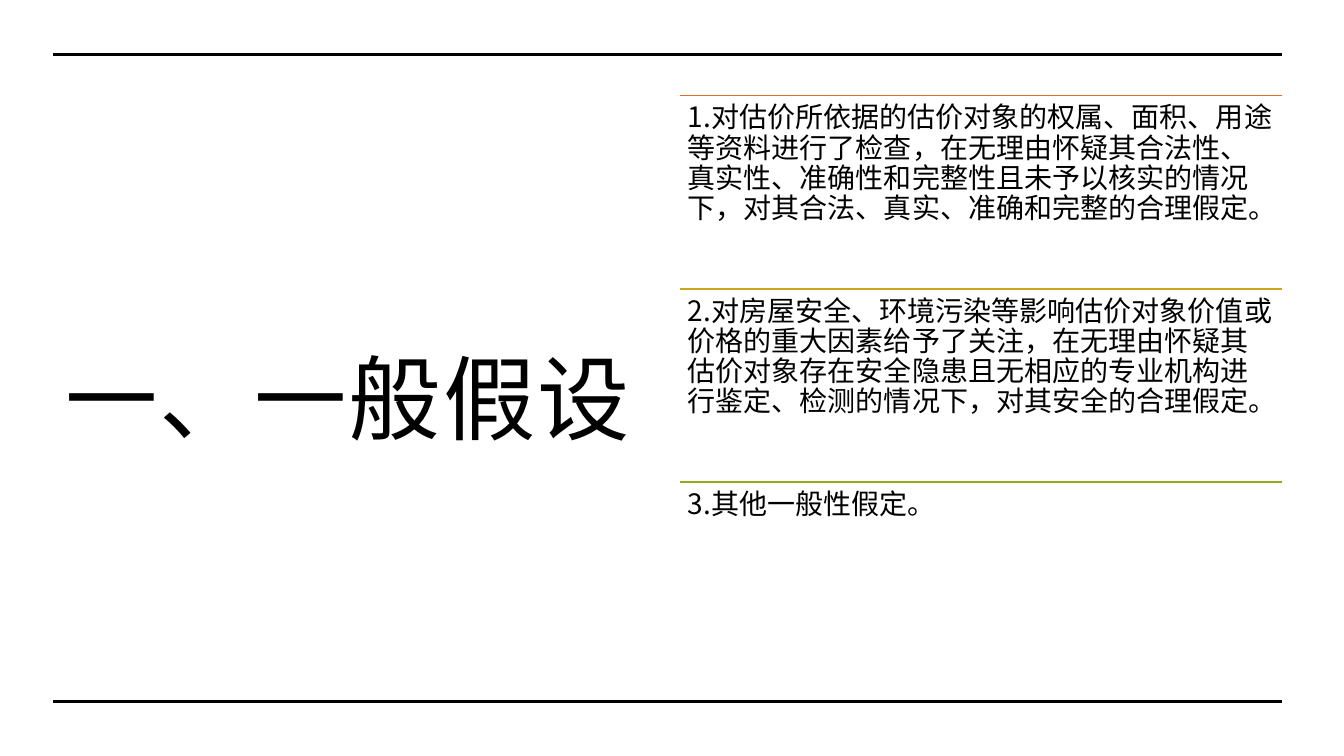
from lxml import etree
from pptx import Presentation
from pptx import util as u
from pptx.dml.color import RGBColor
from pptx.enum import shapes, text
from pptx.oxml.ns import qn

FONT = "Noto Sans CJK SC"
COLORS = {"ink": "000000", "orange": "E66B29", "gold": "CEA51F", "green": "91AB1F"}
LEFT, RIGHT = 0.53, 12.72
POINTS = [
    ("orange", "1.对估价所依据的估价对象的权属、面积、用途等资料进行了检查，在无理由怀疑其合法性、"
               "真实性、准确性和完整性且未予以核实的情况下，对其合法、真实、准确和完整的合理假定。"),
    ("gold", "2.对房屋安全、环境污染等影响估价对象价值或价格的重大因素给予了关注，在无理由怀疑"
             "其估价对象存在安全隐患且无相应的专业机构进行鉴定、检测的情况下，对其安全的合理假定。"),
    ("green", "3.其他一般性假定。"),
]


def rule(slide, left, top, width, color, weight):
    """Draw a horizontal line."""
    line = slide.shapes.add_connector(
        shapes.MSO_CONNECTOR.STRAIGHT, u.Inches(left), u.Inches(top),
        u.Inches(left + width), u.Inches(top))
    line.line.color.rgb = RGBColor.from_string(COLORS[color])
    line.line.width = u.Pt(weight)
    etree.SubElement(line._element.spPr, qn("a:effectLst"))


def write(shape, words, size, anchor, inset, spacing, track=0):
    """Fill a shape with one left-aligned paragraph."""
    frame = shape.text_frame
    frame.text = words
    frame.word_wrap = True
    frame.auto_size = text.MSO_AUTO_SIZE.NONE
    frame.vertical_anchor = anchor
    frame.margin_left = frame.margin_right = u.Inches(inset)
    frame.margin_top = frame.margin_bottom = u.Inches(inset)
    para = frame.paragraphs[0]
    para.alignment = text.PP_ALIGN.LEFT
    para.line_spacing = spacing
    font = para.font
    font.size = u.Pt(size)
    font.name = FONT
    font.color.rgb = RGBColor.from_string(COLORS["ink"])
    # East Asian typeface and letter spacing
    props = font._element
    etree.SubElement(props, qn("a:ea"), typeface=FONT)
    if track:
        props.set("spc", str(int(track * 100)))


def heading(slide, left, top, width, height):
    title = slide.shapes.title
    title.left, title.top = u.Inches(left), u.Inches(top)
    title.width, title.height = u.Inches(width), u.Inches(height)
    write(title, "一、一般假设", 66, text.MSO_ANCHOR.MIDDLE, 0.12, 1.18, 1.5)
    title.text_frame.margin_bottom = u.Inches(0.1)


def listing(slide, left, top, width, height):
    """Stack the points in equal rows, each under its own line."""
    row = height / len(POINTS)
    for i, (color, words) in enumerate(POINTS):
        y = top + i * row
        rule(slide, left, y, width, color, 1)
        box = slide.shapes.add_textbox(
            u.Inches(left), u.Inches(y), u.Inches(width), u.Inches(row))
        write(box, words, 20, text.MSO_ANCHOR.TOP, 0.08, 0.9)


def main():
    deck = Presentation()
    deck.slide_width, deck.slide_height = u.Inches(13.33), u.Inches(7.5)
    slide = deck.slides.add_slide(deck.slide_layouts[5])
    heading(slide, LEFT, 0.95, 6.14, 5.75)
    # Frame lines
    for y in (0.54, 6.96):
        rule(slide, LEFT, y, RIGHT - LEFT, "ink", 2.25)
    listing(slide, 6.74, 0.95, RIGHT - 6.74, 5.75)
    deck.save("out.pptx")


if __name__ == "__main__":
    main()
